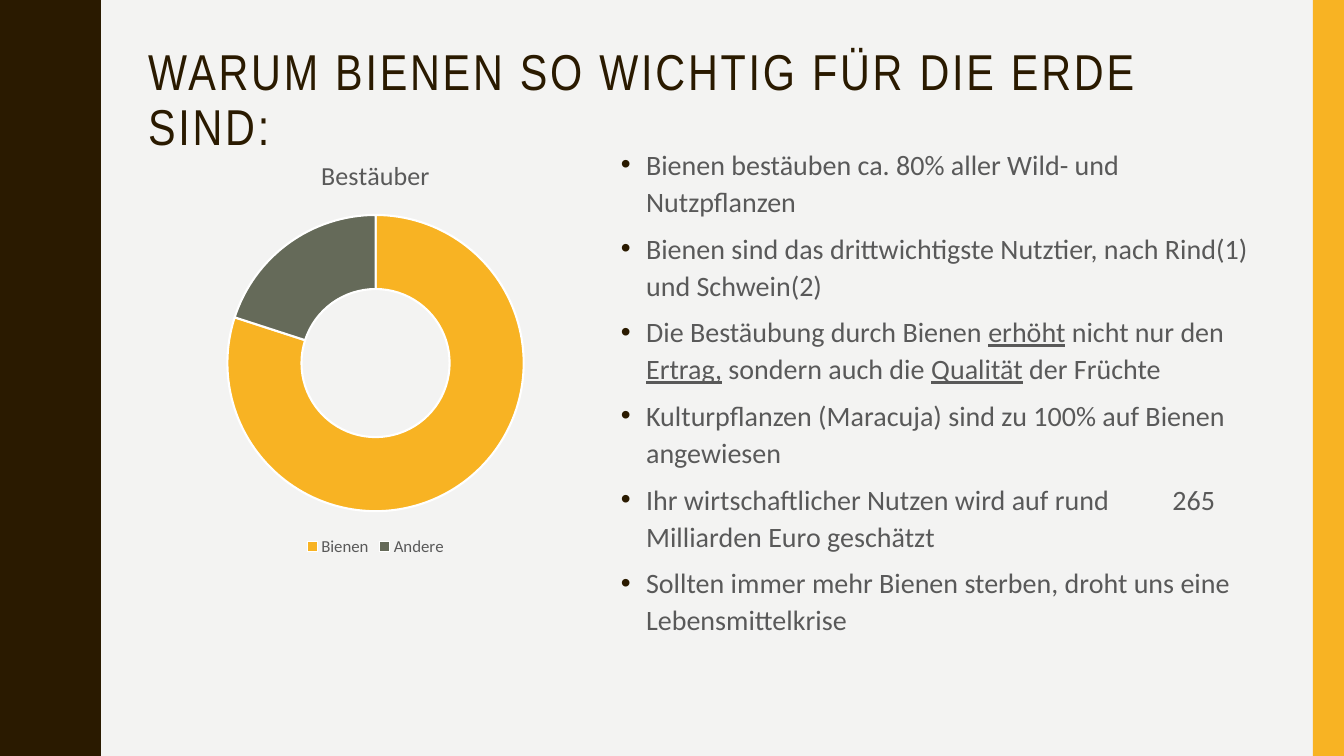
from lxml import etree
from pptx import Presentation, util as u
from pptx.chart.data import CategoryChartData
from pptx.dml.color import RGBColor
from pptx.enum import chart as ch, shapes as sh
from pptx.oxml import parse_xml
from pptx.oxml.ns import nsdecls, qn

COLORS = {"paper": "F3F3F2", "bark": "2A1A00", "honey": "F8B323",
          "moss": "656A59", "text": "595959", "white": "FFFFFF"}
WIDTH, HEIGHT = 13.33, 7.5
PERIOD = 1.5
TROUGH, CREST = 0.78, 0.97
RISE = [(0, 0.78), (0.07, 0.78), (0.14, 0.79), (0.2, 0.8), (0.25, 0.81),
        (0.5, 0.93), (0.55, 0.95), (0.61, 0.96), (0.68, 0.97)]
TITLE = "WARUM BIENEN SO WICHTIG FÜR DIE ERDE SIND:"
POLLINATORS = {"Bienen": (80, "honey"), "Andere": (20, "moss")}
# Every second piece of a point is underlined
POINTS = [
    ["Bienen bestäuben ca. 80% aller Wild- und Nutzpflanzen"],
    ["Bienen sind das drittwichtigste Nutztier, nach Rind(1) und Schwein(2)"],
    ["Die Bestäubung durch Bienen ", "erhöht", " nicht nur den ", "Ertrag,",
     " sondern auch die ", "Qualität", " der Früchte"],
    ["Kulturpflanzen (Maracuja) sind zu 100% auf Bienen angewiesen"],
    ["Ihr wirtschaftlicher Nutzen wird auf rund\t265 Milliarden Euro geschätzt"],
    ["Sollten immer mehr Bienen sterben, droht uns eine Lebensmittelkrise"],
]


def rgb(name):
    return RGBColor.from_string(COLORS[name])


def inches(box):
    return [u.Inches(length) for length in box]


def set_font(font, size, color, name="Calibri", **more):
    for key, value in dict(size=u.Pt(size), name=name, bold=False, **more).items():
        setattr(font, key, value)
    font.color.rgb = rgb(color)


def paint(shape, color):
    shape.shadow.inherit = False
    shape.fill.solid()
    shape.fill.fore_color.rgb = rgb(color)
    shape.line.fill.background()


def add_wavy_edge(slide, height):
    wave = []
    for period in range(round(height / PERIOD)):
        top = period * PERIOD
        wave += [(x, top + y) for y, x in RISE]
        wave += [(TROUGH + CREST - x, top + PERIOD / 2 + y) for y, x in RISE]
    outline = slide.shapes.build_freeform(0, 0, scale=u.Inches(1))
    outline.add_line_segments(wave + [(TROUGH, height), (0, height)])
    paint(outline.convert_to_shape(), "bark")


def add_honey_bar(slide, box):
    paint(slide.shapes.add_shape(sh.MSO_SHAPE.RECTANGLE, *inches(box)), "honey")


def add_text_frame(slide, box):
    frame = slide.shapes.add_textbox(*inches(box)).text_frame
    frame.word_wrap = True
    return frame


def add_title(slide, box):
    line = add_text_frame(slide, box).paragraphs[0]
    line.line_spacing = 0.9
    run = line.add_run()
    run.text = TITLE
    set_font(run.font, 36, "bark", "Arial Narrow")
    run.font._element.set("spc", "200")


def add_bullet(paragraph):
    """Hang a dark bullet before the paragraph and set its one tab stop."""
    props = paragraph._p.get_or_add_pPr()
    props.set("marL", str(u.Inches(0.25)))
    props.set("indent", str(-u.Inches(0.25)))
    color = etree.SubElement(props, qn("a:buClr"))
    etree.SubElement(color, qn("a:srgbClr"), val=COLORS["bark"])
    etree.SubElement(props, qn("a:buFont"), typeface="Arial")
    etree.SubElement(props, qn("a:buChar"), char="•")
    stops = etree.SubElement(props, qn("a:tabLst"))
    etree.SubElement(stops, qn("a:tab"), pos=str(u.Inches(5.47)), algn="l")


def add_points(slide, box):
    frame = add_text_frame(slide, box)
    for number, pieces in enumerate(POINTS):
        point = frame.add_paragraph() if number else frame.paragraphs[0]
        point.line_spacing = 1.1
        point.space_before = u.Pt(7)
        add_bullet(point)
        for index, piece in enumerate(pieces):
            run = point.add_run()
            run.text = piece
            set_font(run.font, 20, "text", underline=index % 2 == 1)


def add_pollinator_chart(slide, box):
    data = CategoryChartData()
    data.categories = list(POLLINATORS)
    data.add_series("Bestäuber", [share for share, _ in POLLINATORS.values()])
    chart = slide.shapes.add_chart(ch.XL_CHART_TYPE.DOUGHNUT, *inches(box), data).chart
    set_font(chart.font, 10, "text")

    chart.has_title = True
    heading = chart.chart_title.text_frame
    heading.text = "Bestäuber"
    set_font(heading.paragraphs[0].runs[0].font, 18.6, "text")
    chart.has_legend = True
    chart.legend.position = ch.XL_LEGEND_POSITION.BOTTOM
    chart.legend.include_in_layout = False
    set_font(chart.legend.font, 12, "text")

    ring = chart.plots[0]
    ring.vary_by_categories = True
    ring.has_data_labels = False
    for hole in ring._element.findall(qn("c:holeSize")):
        ring._element.remove(hole)
    ring._element.append(parse_xml(f'<c:holeSize {nsdecls("c")} val="75"/>'))
    for index, (_, color) in enumerate(POLLINATORS.values()):
        part = ring.series[0].points[index].format
        part.fill.solid()
        part.fill.fore_color.rgb = rgb(color)
        part.line.color.rgb = rgb("white")
        part.line.width = u.Pt(1.5)


def main():
    deck = Presentation()
    deck.slide_width, deck.slide_height = inches((WIDTH, HEIGHT))
    slide = deck.slides.add_slide(deck.slide_layouts[6])
    slide.background.fill.solid()
    slide.background.fill.fore_color.rgb = rgb("paper")
    add_wavy_edge(slide, HEIGHT)
    add_honey_bar(slide, (WIDTH - 0.31, 0, 0.31, HEIGHT))
    add_title(slide, (1.37, 0.42, 11.13, 1.63))
    add_pollinator_chart(slide, (1.38, 1.38, 4.69, 4.18))
    add_points(slide, (6.06, 1.38, 6.46, 5.08))
    deck.save("out.pptx")


if __name__ == "__main__":
    main()
